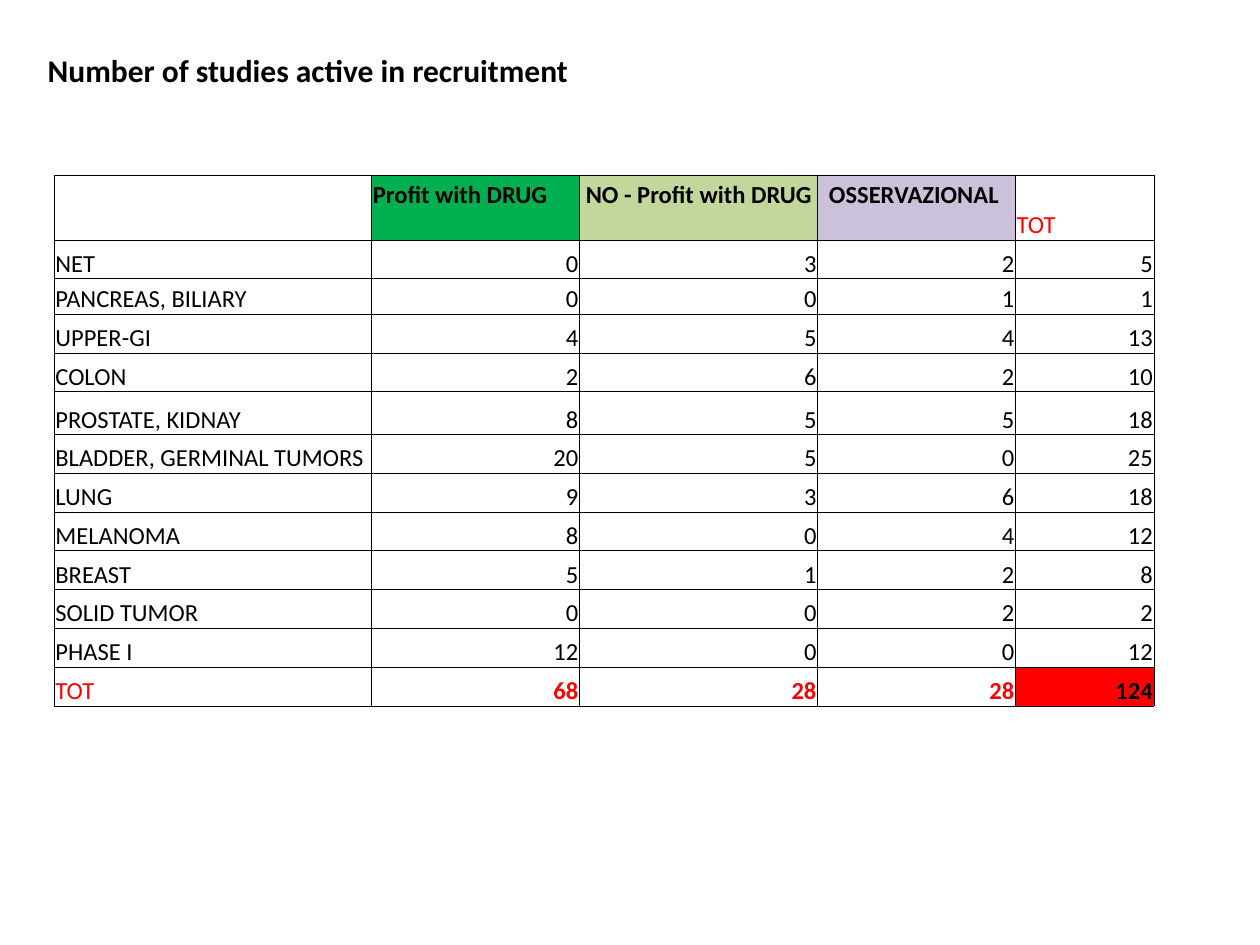
import lxml.etree
import pptx
import pptx.dml.color
import pptx.enum.text
import pptx.oxml.ns
import pptx.util

RGBColor = pptx.dml.color.RGBColor
BLACK = RGBColor(0x00, 0x00, 0x00)
WHITE = RGBColor(0xFF, 0xFF, 0xFF)
RED = RGBColor(0xFF, 0x00, 0x00)
GREEN = RGBColor(0x00, 0xB0, 0x50)
OLIVE = RGBColor(0xC3, 0xD6, 0x9B)
LILAC = RGBColor(0xCC, 0xC1, 0xDA)

GRID_COLUMNS, GRID_ROWS = 100, 75
COLUMN_WIDTHS = [25.2, 16.5, 18.9, 15.7, 11]
ROW_HEIGHTS = [5.15, 3.08, 2.8, 3.08, 3.08, 3.4] + [3.08] * 7
HEADINGS = [
    ("Profit with DRUG", GREEN, 0.1),
    ("NO - Profit with DRUG", OLIVE, 0.5),
    ("OSSERVAZIONAL", LILAC, 0.9),
]
STUDIES = {
    "NET": (0, 3, 2),
    "PANCREAS, BILIARY": (0, 0, 1),
    "UPPER-GI": (4, 5, 4),
    "COLON": (2, 6, 2),
    "PROSTATE, KIDNAY": (8, 5, 5),
    "BLADDER, GERMINAL TUMORS": (20, 5, 0),
    "LUNG": (9, 3, 6),
    "MELANOMA": (8, 0, 4),
    "BREAST": (5, 1, 2),
    "SOLID TUMOR": (0, 0, 2),
    "PHASE I": (12, 0, 0),
}


class Page:
    font = "Calibri"
    border = pptx.util.Pt(0.5)

    def __init__(self, deck):
        self.slide = deck.slides.add_slide(deck.slide_layouts[6])
        self.column = deck.slide_width / GRID_COLUMNS
        self.row = deck.slide_height / GRID_ROWS

    def across(self, count):
        return round(count * self.column)

    def down(self, count):
        return round(count * self.row)

    def span(self, para, text, size, color=BLACK, bold=False):
        span = para.add_run()
        span.text = text
        span.font.name = self.font
        span.font.size = pptx.util.Pt(size)
        span.font.bold = bold
        span.font.color.rgb = color

    def text(self, left, top, width, height, text, size):
        box = self.slide.shapes.add_textbox(
            self.across(left), self.down(top), self.across(width), self.down(height))
        box.text_frame.word_wrap = True
        box.text_frame.auto_size = pptx.enum.text.MSO_AUTO_SIZE.SHAPE_TO_FIT_TEXT
        self.span(box.text_frame.paragraphs[0], text, size, bold=True)

    def table(self, left, top, widths, heights):
        frame = self.slide.shapes.add_table(
            len(heights), len(widths), self.across(left), self.down(top),
            self.across(sum(widths)), self.down(sum(heights)))
        table = frame.table
        table.first_row = table.horz_banding = False
        for column, width in zip(table.columns, widths):
            column.width = self.across(width)
        for row, height in zip(table.rows, heights):
            row.height = self.down(height)
        for cell in table.iter_cells():
            self.outline(cell)
            cell.fill.background()
        return table

    def outline(self, cell):
        name = pptx.oxml.ns.qn
        properties = cell._tc.get_or_add_tcPr()
        for side in ("a:lnL", "a:lnR", "a:lnT", "a:lnB"):
            line = lxml.etree.SubElement(properties, name(side), w=str(self.border))
            fill = lxml.etree.SubElement(line, name("a:solidFill"))
            lxml.etree.SubElement(fill, name("a:srgbClr"), val=str(BLACK))

    def cell(self, cell, value, color=BLACK, bold=False, fill=None, indent=0.1, lift=0):
        cell.vertical_anchor = pptx.enum.text.MSO_ANCHOR.BOTTOM
        cell.margin_left = self.across(indent)
        cell.margin_right = self.across(0.1)
        cell.margin_top = self.down(0.1)
        cell.margin_bottom = self.down(lift)
        if fill is not None:
            cell.fill.solid()
            cell.fill.fore_color.rgb = fill
        para = cell.text_frame.paragraphs[0]
        if isinstance(value, int):
            para.alignment = pptx.enum.text.PP_ALIGN.RIGHT
        if value != "":
            self.span(para, str(value), 14, color, bold)


def main():
    deck = pptx.Presentation()
    deck.slide_width = pptx.util.Inches(10)
    deck.slide_height = pptx.util.Inches(7.5)
    page = Page(deck)

    table = page.table(4.3, 13.9, COLUMN_WIDTHS, ROW_HEIGHTS)
    page.cell(table.cell(0, 0), "", fill=WHITE)
    for column, (heading, fill, indent) in enumerate(HEADINGS, 1):
        page.cell(table.cell(0, column), heading, bold=True,
                  fill=fill, indent=indent, lift=2.4)
    page.cell(table.cell(0, 4), "TOT", RED, fill=WHITE)

    for row, (area, counts) in enumerate(STUDIES.items(), 1):
        for column, value in enumerate((area, *counts, sum(counts))):
            page.cell(table.cell(row, column), value)

    totals = [sum(counts) for counts in zip(*STUDIES.values())]
    last = len(STUDIES) + 1
    page.cell(table.cell(last, 0), "TOT", RED)
    for column, total in enumerate(totals, 1):
        page.cell(table.cell(last, column), total, RED, bold=True)
    page.cell(table.cell(last, 4), sum(totals), bold=True, fill=RED)

    page.text(2.8, 3.6, 44.1, 4, "Number of studies active in recruitment", 18)
    deck.save("out.pptx")


if __name__ == "__main__":
    main()
